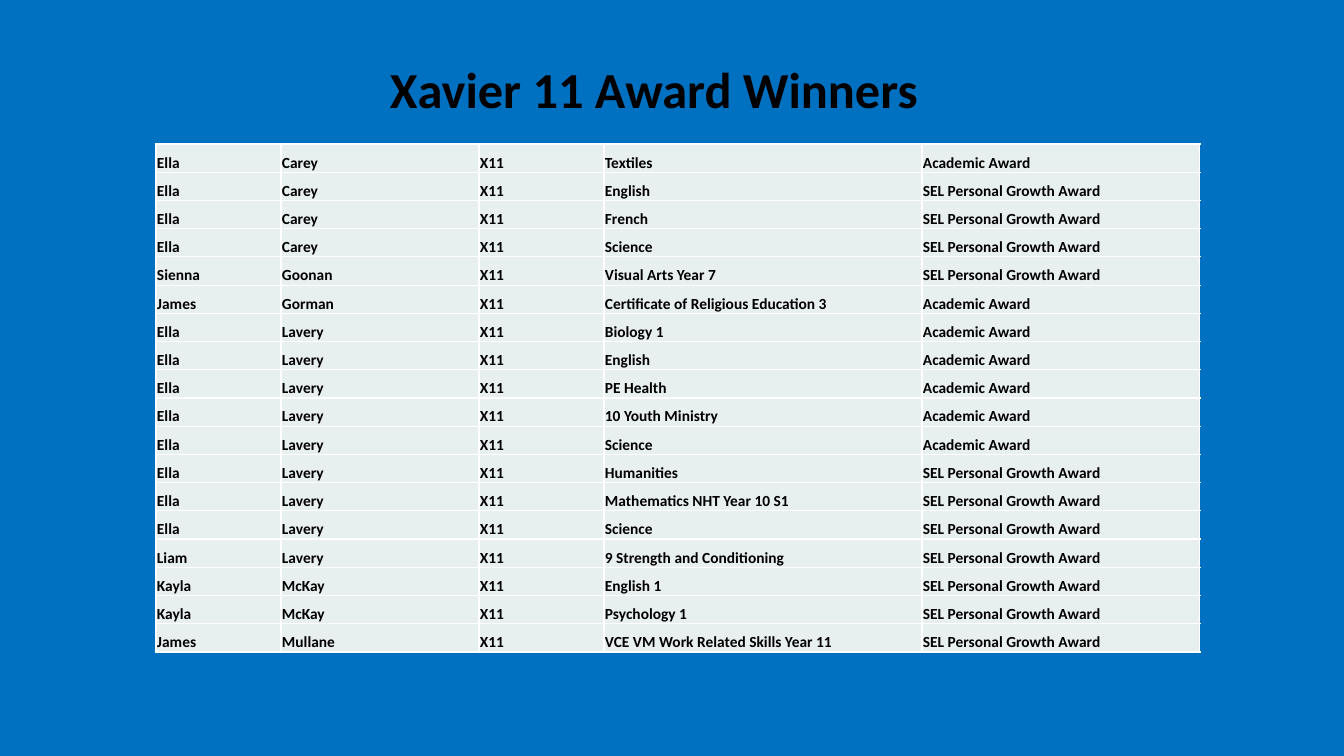
from dataclasses import dataclass

import lxml.etree
import pptx
import pptx.dml.color
import pptx.enum.text
import pptx.oxml.ns
import pptx.slide
import pptx.table
import pptx.text.text
import pptx.util

SCALE = 914400 / 100.8
BLUE = pptx.dml.color.RGBColor(0x00, 0x70, 0xC0)
PALE = pptx.dml.color.RGBColor(0xE8, 0xEF, 0xEF)
WHITE = pptx.dml.color.RGBColor(0xFF, 0xFF, 0xFF)
BLACK = pptx.dml.color.RGBColor(0x00, 0x00, 0x00)
FONT = "Calibri"
GROUP = "X11"
GRADE = "Academic Award"
GROWTH = "SEL Personal Growth Award"
WIDTHS = (125, 198, 125, 318, 278)


@dataclass(frozen=True)
class Award:
    first: str
    last: str
    subject: str
    prize: str

    def cells(self) -> tuple[str, ...]:
        return self.first, self.last, GROUP, self.subject, self.prize


AWARDS = (
    Award("Ella", "Carey", "Textiles", GRADE),
    Award("Ella", "Carey", "English", GROWTH),
    Award("Ella", "Carey", "French", GROWTH),
    Award("Ella", "Carey", "Science", GROWTH),
    Award("Sienna", "Goonan", "Visual Arts Year 7", GROWTH),
    Award("James", "Gorman", "Certificate of Religious Education 3", GRADE),
    Award("Ella", "Lavery", "Biology 1", GRADE),
    Award("Ella", "Lavery", "English", GRADE),
    Award("Ella", "Lavery", "PE Health", GRADE),
    Award("Ella", "Lavery", "10 Youth Ministry", GRADE),
    Award("Ella", "Lavery", "Science", GRADE),
    Award("Ella", "Lavery", "Humanities", GROWTH),
    Award("Ella", "Lavery", "Mathematics NHT Year 10 S1", GROWTH),
    Award("Ella", "Lavery", "Science", GROWTH),
    Award("Liam", "Lavery", "9 Strength and Conditioning", GROWTH),
    Award("Kayla", "McKay", "English 1", GROWTH),
    Award("Kayla", "McKay", "Psychology 1", GROWTH),
    Award("James", "Mullane", "VCE VM Work Related Skills Year 11", GROWTH),
)


def px(count: int) -> pptx.util.Emu:
    return pptx.util.Emu(round(count * SCALE))


def write(frame: pptx.text.text.TextFrame, text: str, size: int) -> None:
    frame.text = text
    font = frame.paragraphs[0].runs[0].font
    font.name = FONT
    font.size = pptx.util.Pt(size)
    font.bold = True
    font.color.rgb = BLACK


def edge(cell: pptx.table._Cell) -> None:
    props = cell._tc.get_or_add_tcPr()
    for side in ("a:lnL", "a:lnR", "a:lnT", "a:lnB"):
        line = lxml.etree.SubElement(props, pptx.oxml.ns.qn(side), w=str(pptx.util.Pt(1)))
        fill = lxml.etree.SubElement(line, pptx.oxml.ns.qn("a:solidFill"))
        lxml.etree.SubElement(fill, pptx.oxml.ns.qn("a:srgbClr"), val=str(WHITE))


def fill_cell(cell: pptx.table._Cell, text: str) -> None:
    edge(cell)
    cell.fill.solid()
    cell.fill.fore_color.rgb = PALE
    cell.margin_left = cell.margin_right = cell.margin_top = px(1)
    cell.margin_bottom = 0
    cell.vertical_anchor = pptx.enum.text.MSO_ANCHOR.BOTTOM
    write(cell.text_frame, text, 11)


def add_title(slide: pptx.slide.Slide) -> None:
    frame = slide.shapes.add_textbox(px(67), px(60), px(1174), px(125)).text_frame
    frame.word_wrap = True
    write(frame, "Xavier 11 Award Winners", 36)
    frame.paragraphs[0].alignment = pptx.enum.text.PP_ALIGN.CENTER
    frame.paragraphs[0].line_spacing = 0.9


def add_awards(slide: pptx.slide.Slide) -> None:
    table = slide.shapes.add_table(
        len(AWARDS), len(WIDTHS), px(156), px(144), px(sum(WIDTHS)), px(508)
    ).table
    table.first_row = False
    table.horz_banding = False
    for column, width in zip(table.columns, WIDTHS):
        column.width = px(width)
    for row, award in zip(table.rows, AWARDS):
        for cell, text in zip(row.cells, award.cells()):
            fill_cell(cell, text)


def main() -> None:
    deck = pptx.Presentation()
    deck.slide_width, deck.slide_height = px(1344), px(756)
    slide = deck.slides.add_slide(deck.slide_layouts[6])
    slide.background.fill.solid()
    slide.background.fill.fore_color.rgb = BLUE
    add_title(slide)
    add_awards(slide)
    deck.save("out.pptx")


if __name__ == "__main__":
    main()
